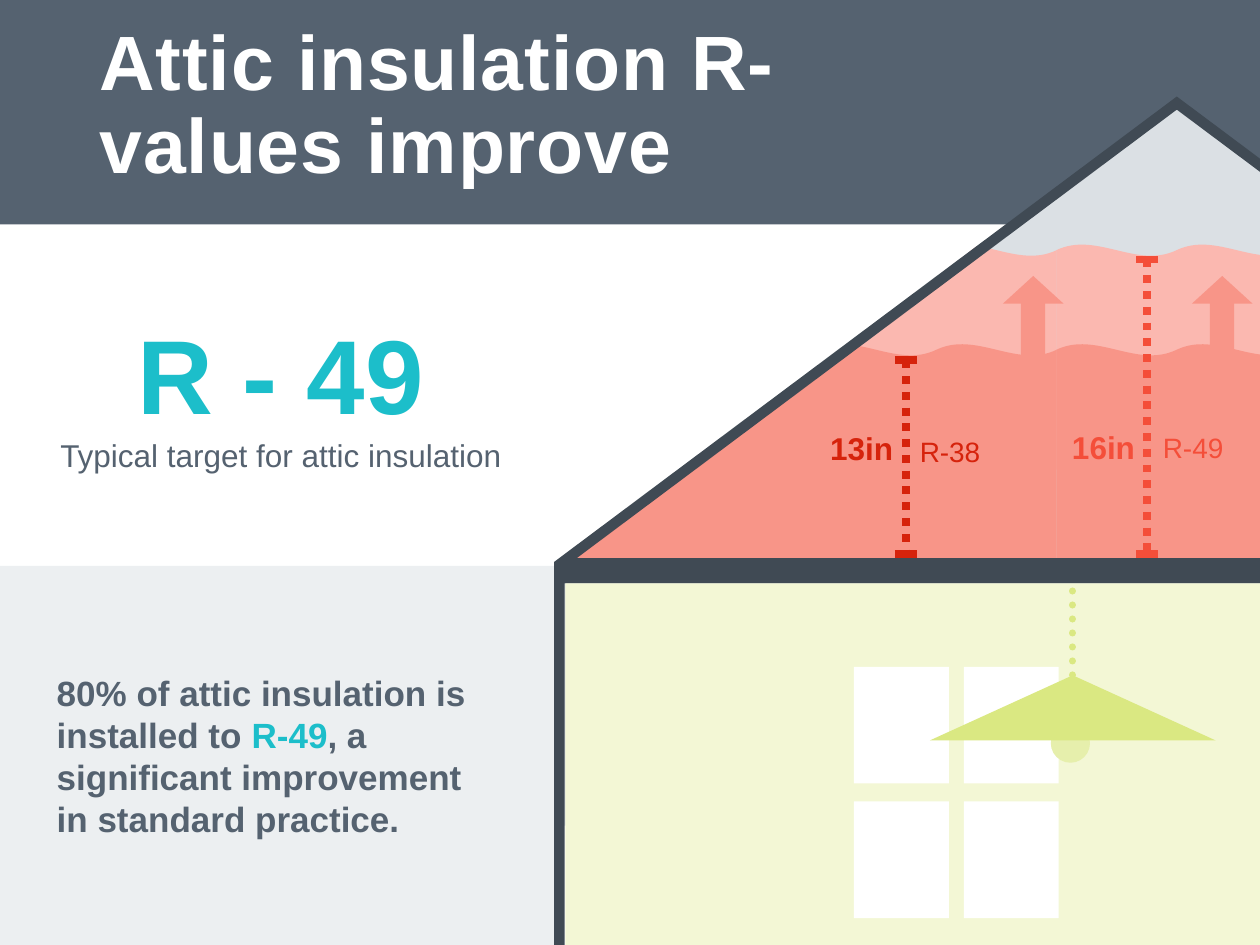
import pptx
import pptx.util
from lxml import etree
from pptx.dml.color import RGBColor
from pptx.enum.dml import MSO_LINE
from pptx.enum.shapes import MSO_CONNECTOR, MSO_SHAPE
from pptx.enum.text import MSO_ANCHOR, MSO_AUTO_SIZE, PP_ALIGN
from pptx.oxml.ns import qn

Pt = pptx.util.Pt

SLATE, TEAL, WHITE, MIST = "556270", "1CBECA", "FFFFFF", "DBE0E4"
FRAME, PALE_PINK, PINK = "404A54", "FBB8B0", "F89588"
ROOM, LAMP, BULB = "F3F7D5", "DAE882", "E6EFAC"

TITLE = "Attic insulation R-values improve"
TARGET = [("R - 49", 60, TEAL, True),
          ("Typical target for attic insulation", 18, SLATE, False)]
FINDING = [("80% of attic insulation is installed to ", SLATE), ("R-49", TEAL),
           (", a significant improvement in standard practice.", SLATE)]
INSULATION = [(139.7, PALE_PINK), (196.6, PINK)]  # top, colour
MEASURES = [  # depth, its place, rating, its place, bar x, top, bottom, colour
    ("13in", (467.3, 241.9), "R-38", (510.5, 244.8), 517.7, 205.9, 316.8, "D6230C"),
    ("16in", (605.5, 241.2), "R-49", (649.4, 242.6), 655.6, 148.3, 316.6, "F44E39"),
]

deck = pptx.Presentation()
deck.slide_width, deck.slide_height = Pt(720), Pt(540)
page = deck.slides.add_slide(deck.slide_layouts[5])


def paint(target, colour):
    target.solid()
    target.fore_color.rgb = RGBColor.from_string(colour)


def add_shape(kind, left, top, width, height, colour=None, rotation=0):
    shape = page.shapes.add_shape(kind, Pt(left), Pt(top), Pt(width), Pt(height))
    shape.shadow.inherit = False
    shape.rotation = rotation
    shape.line.fill.background()
    if colour:
        paint(shape.fill, colour)
    else:
        shape.fill.background()
    return shape


def add_house(left, top, width, height, point, colour=None):
    """Upright gabled outline: a pentagon arrow turned to point upwards."""
    shift = (width - height) / 2
    house = add_shape(MSO_SHAPE.PENTAGON, left + shift, top - shift,
                      height, width, colour, rotation=270)
    house.adjustments[0] = point
    return house


def add_line(x1, y1, x2, y2, colour, weight, dotted=False, cap=None):
    line = page.shapes.add_connector(MSO_CONNECTOR.STRAIGHT, Pt(x1), Pt(y1), Pt(x2), Pt(y2))
    paint(line.line.fill, colour)
    line.line.width = Pt(weight)
    if dotted:
        line.line.dash_style = MSO_LINE.ROUND_DOT
    if cap:
        line.line._get_or_add_ln().set("cap", cap)
    etree.SubElement(line.element.spPr, qn("a:effectLst"))


def write(para, text, size, colour, bold=False, align=PP_ALIGN.LEFT):
    para.alignment = align
    span = para.add_run()
    span.text = text
    span.font.name = "Arial"
    span.font.size = Pt(size)
    span.font.bold = bold
    paint(span.font.fill, colour)
    return span


def add_box(left, top, width, height):
    box = page.shapes.add_textbox(Pt(left), Pt(top), Pt(width), Pt(height))
    box.text_frame.word_wrap = True
    return box.text_frame


# Banner and title
add_shape(MSO_SHAPE.RECTANGLE, 0, 0, 720, 128.2, SLATE)
title = page.shapes.title
title.left, title.top, title.width, title.height = Pt(49.7), Pt(15.1), Pt(536.4), Pt(97.2)
title.element.getparent().append(title.element)
title.text_frame.word_wrap = True
title.text_frame.auto_size = MSO_AUTO_SIZE.NONE
title.text_frame.vertical_anchor = MSO_ANCHOR.BOTTOM
heading = title.text_frame.paragraphs[0]
heading.line_spacing = 0.9
span = write(heading, TITLE, 44, WHITE, bold=True)
span.font._element.set("spc", "50")

# Attic background
add_house(320, 60.8, 705.6, 411, 0.644, MIST)

# Left column
panel = add_shape(MSO_SHAPE.RECTANGLE, 0, 323.3, 318.2, 216.7, MIST)
tint = panel.element.spPr.find(".//" + qn("a:srgbClr"))
etree.SubElement(tint, qn("a:alpha")).set("val", "50000")
frame = panel.text_frame
frame.word_wrap = True
frame.vertical_anchor = MSO_ANCHOR.MIDDLE
frame.margin_left = frame.margin_right = Pt(32.4)
for text, colour in FINDING:
    write(frame.paragraphs[0], text, 20, colour, bold=True)

frame = add_box(19.4, 173.5, 282.2, 101.5)
for index, (text, size, colour, bold) in enumerate(TARGET):
    para = frame.add_paragraph() if index else frame.paragraphs[0]
    write(para, text, size, colour, bold, PP_ALIGN.CENTER)

# Insulation layers, trimmed along the roof slope
for top, colour in INSULATION:
    for column in range(3):
        wave = add_shape(MSO_SHAPE.DOUBLE_WAVE, 329 + column * 137.3, top, 137.5, 131.8, colour)
        wave.adjustments[0] = 0.025
        wave.adjustments[1] = 0
for left in (573.1, 681.1):
    add_shape(MSO_SHAPE.ISOSCELES_TRIANGLE, left, 157.7, 34.6, 15.8, PINK)
    add_shape(MSO_SHAPE.RECTANGLE, left + 10.3, 173.3, 13.9, 31, PINK)

builder = page.shapes.build_freeform(Pt(325.4), Pt(321.8))
builder.add_line_segments([(Pt(325.4), Pt(136.1)), (Pt(563.8), Pt(136.1))])
slope = builder.convert_to_shape()
slope.shadow.inherit = False
slope.line.fill.background()
paint(slope.fill, WHITE)

# Depth measures
for depth, depth_at, rating, rating_at, x, top, bottom, colour in MEASURES:
    add_line(x, top, x, bottom, colour, 4.5, dotted=True)
    for y in (top, bottom):
        add_line(x - 6.3, y, x + 6.3, y, colour, 4.5)
    write(add_box(*depth_at, 53.3, 28.8).paragraphs[0], depth, 18, colour, bold=True)
    write(add_box(*rating_at, 64.8, 26.6).paragraphs[0], rating, 16, colour,
          align=PP_ALIGN.CENTER)

# House frame
add_shape(MSO_SHAPE.RECTANGLE, 319.7, 319, 400.3, 14.4, FRAME)
walls = add_house(319.7, 58.9, 705.6, 491, 0.537)
paint(walls.line.fill, FRAME)
walls.line.width = Pt(6)
etree.SubElement(walls.line._get_or_add_ln(), qn("a:miter")).set("lim", "800000")

# Room with window and lamp
add_shape(MSO_SHAPE.RECTANGLE, 323.1, 333.4, 400, 206.6, ROOM)
for row in range(2):
    for column in range(2):
        add_shape(MSO_SHAPE.RECTANGLE, 488 + column * 62.8, 381 + row * 77, 54.2, 66.7, WHITE)
add_shape(MSO_SHAPE.OVAL, 600.5, 413.5, 22.4, 22.4, BULB)
add_line(612.8, 337.7, 612.8, 387.4, LAMP, 4, dotted=True, cap="rnd")
add_shape(MSO_SHAPE.ISOSCELES_TRIANGLE, 531.4, 385.9, 163.2, 37.2, LAMP)

deck.save("out.pptx")
